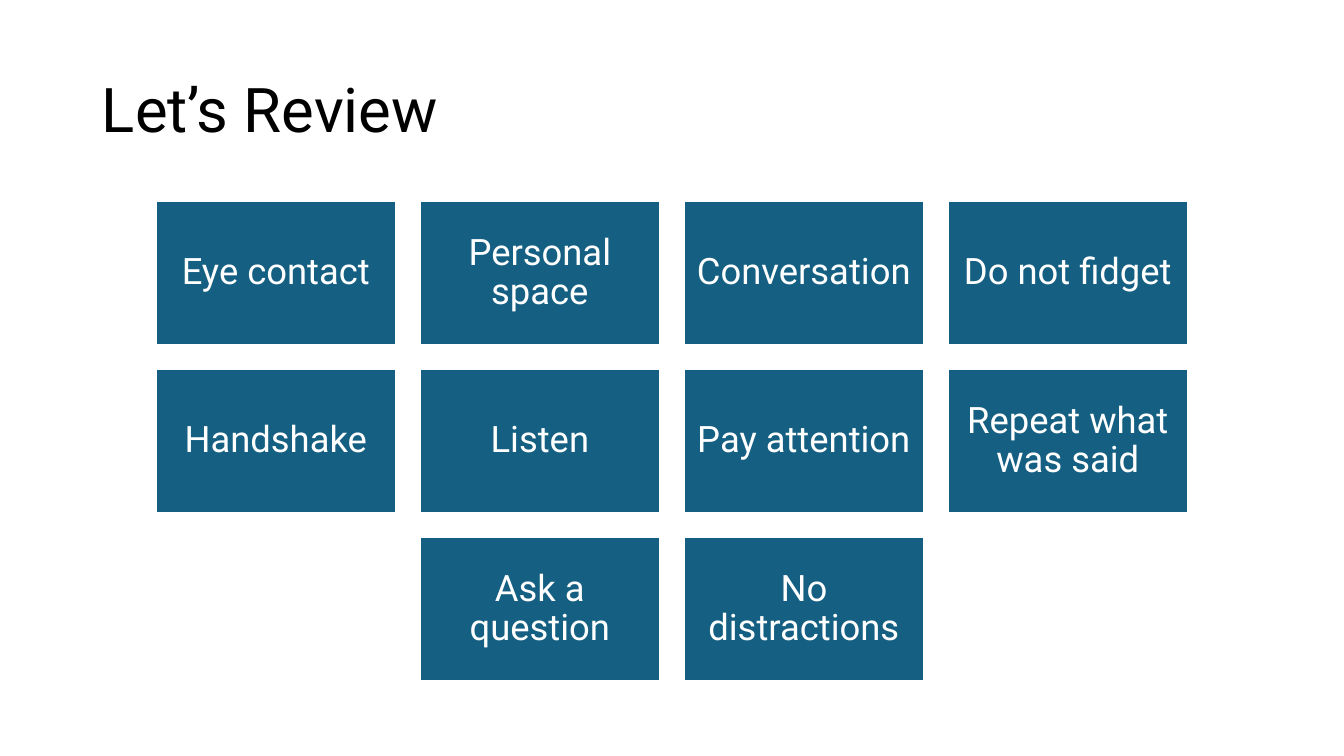
from pptx import Presentation, util as u
from pptx.dml.color import RGBColor
from pptx.enum import shapes, text

EMU_PER_PX = 914400 / 100.8
SLIDE_W, SLIDE_H = 1344, 756
BLACK = RGBColor(0x00, 0x00, 0x00)
WHITE = RGBColor(0xFF, 0xFF, 0xFF)
TEAL = RGBColor(0x15, 0x60, 0x82)

CARD_W, CARD_H, GAP = 240, 144, 24
CARDS_TOP = 201
REVIEW_ROWS = [
    ["Eye contact", "Personal space", "Conversation", "Do not fidget"],
    ["Handshake", "Listen", "Pay attention", "Repeat what was said"],
    ["Ask a question", "No distractions"],
]


def px(length):
    return u.Emu(round(length * EMU_PER_PX))


def write(frame, wording, *, size, color, align, inset, font="Roboto"):
    """Fill a text frame; inset is (horizontal, vertical) in px."""
    frame.word_wrap = True
    frame.vertical_anchor = text.MSO_ANCHOR.MIDDLE
    frame.margin_left = frame.margin_right = px(inset[0])
    frame.margin_top = frame.margin_bottom = px(inset[1])
    paragraph = frame.paragraphs[0]
    paragraph.alignment = align
    paragraph.line_spacing = 0.9
    run = paragraph.add_run()
    run.text = wording
    run.font.name = font
    run.font.size = u.Pt(size)
    run.font.color.rgb = color


class ReviewSlide:
    def __init__(self, deck):
        self.slide = deck.slides.add_slide(deck.slide_layouts[6])
        self.card_fill = TEAL
        self.card_line = WHITE

    def title(self, wording, left, top, width, height):
        heading = self.slide.shapes.add_textbox(*map(px, (left, top, width, height)))
        write(heading.text_frame, wording, size=44, color=BLACK,
              align=text.PP_ALIGN.LEFT, inset=(10, 5))

    def card(self, wording, left, top):
        card = self.slide.shapes.add_shape(
            shapes.MSO_SHAPE.RECTANGLE, *map(px, (left, top, CARD_W, CARD_H)))
        card.shadow.inherit = False
        card.fill.solid()
        card.fill.fore_color.rgb = self.card_fill
        card.line.color.rgb = self.card_line
        card.line.width = u.Pt(1.5)
        write(card.text_frame, wording, size=26, color=WHITE,
              align=text.PP_ALIGN.CENTER, inset=(11, 11))

    def card_row(self, wordings, top):
        """Place a row of cards centred across the slide."""
        step = CARD_W + GAP
        left = (SLIDE_W - len(wordings) * step + GAP) // 2
        for column, wording in enumerate(wordings):
            self.card(wording, left + column * step, top)


def main():
    deck = Presentation()
    deck.slide_width, deck.slide_height = px(SLIDE_W), px(SLIDE_H)
    review = ReviewSlide(deck)
    review.title("Let’s Review", 92, 40, 1159, 146)
    for row, wordings in enumerate(REVIEW_ROWS):
        review.card_row(wordings, CARDS_TOP + row * (CARD_H + GAP))
    deck.save("out.pptx")


if __name__ == "__main__":
    main()
